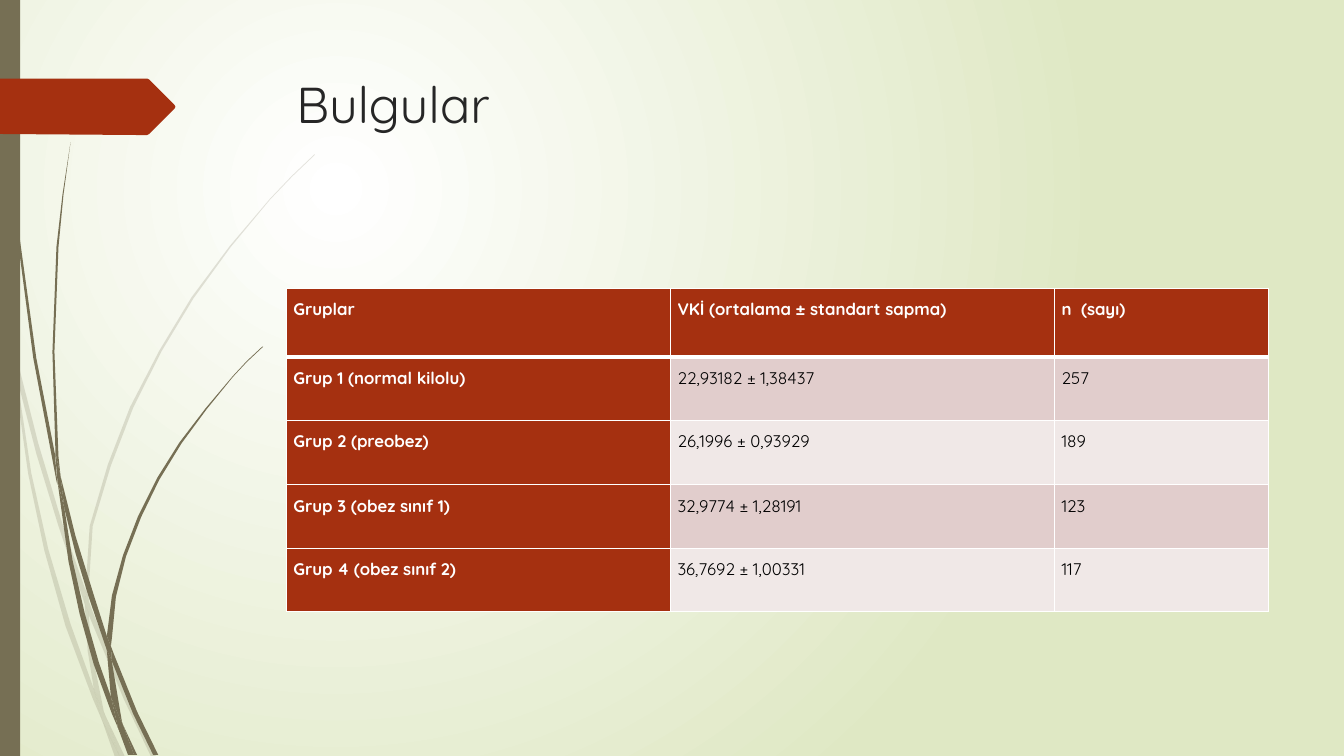
"""Builds the "Bulgular" findings slide with its grass motif and group table."""
from pptx import Presentation
from pptx.dml.color import RGBColor
from pptx.enum.shapes import MSO_SHAPE
from pptx.enum.text import MSO_ANCHOR
from pptx.oxml import parse_xml
from pptx.oxml.ns import nsdecls, qn
from pptx.util import Inches, Pt
from lxml.etree import SubElement

COLORS = {
    "stem": "766F54", "accent": "A53010", "title": "262626", "white": "FFFFFF",
    "black": "000000", "band_dark": "E1CDCC", "band_light": "F0E8E7", "edge": "DFE8C4",
}

HUNDREDTHS = 100

PALE_BLADES = [
    [(11, 350), (9, 322), (0, 282), (0, 299), (10, 344)],
    [(58, 522), (84, 599), (85, 586), (62, 520), (38, 440), (14, 345), (17, 376), (36, 450)],
    [(92, 607), (88, 596), (88, 610), (123, 694), (150, 751), (155, 751), (127, 692)],
    [(119, 751), (124, 751), (105, 711)],
    [(93, 683), (70, 619), (48, 545), (31, 469), (17, 376), (11, 350), (28, 470), (44, 546),
     (65, 621), (92, 693), (101, 714), (99, 707)],
    [(84, 599), (87, 646), (93, 683), (96, 692), (105, 711), (103, 706), (91, 646), (88, 610),
     (88, 608)],
    [(88, 584), (92, 522), (110, 462), (132, 405), (160, 349), (192, 296), (229, 245), (268, 198),
     (290, 175), (312, 154), (312, 153), (289, 175), (268, 197), (228, 244), (190, 295), (158, 348),
     (129, 404), (107, 461), (89, 522), (85, 584), (85, 586), (88, 596)],
    [(101, 714), (114, 751), (119, 751)],
    [(88, 608), (88, 610), (88, 596), (85, 586), (84, 599)],
    [(96, 692), (93, 683), (99, 707), (101, 714), (119, 751), (105, 711)],
]

DARK_BLADES = [
    [(7, 110), (17, 233), (33, 355), (56, 477), (57, 481), (55, 457), (55, 453), (36, 355),
     (19, 232), (8, 109), (5, 48), (4, 0), (3, 0), (4, 48)],
    [(88, 592), (106, 645), (106, 631), (93, 590), (75, 532), (60, 472), (64, 505), (75, 549)],
    [(113, 649), (110, 641), (111, 656), (132, 708), (152, 749), (157, 749), (136, 706)],
    [(110, 691), (98, 657), (84, 608), (72, 556), (64, 505), (57, 477), (68, 557), (79, 609),
     (93, 659), (111, 708), (117, 722), (116, 717)],
    [(60, 472), (58, 453), (54, 349), (58, 245), (63, 193), (70, 141), (62, 193), (56, 245),
     (52, 349), (55, 449)],
    [(133, 749), (136, 749), (122, 719)],
    [(57, 477), (64, 505), (60, 472), (55, 449), (55, 453)],
    [(111, 633), (115, 592), (125, 552), (140, 513), (158, 476), (180, 440), (205, 406), (231, 374),
     (245, 359), (261, 344), (260, 344), (245, 358), (231, 373), (204, 405), (178, 439), (156, 474),
     (137, 512), (122, 551), (111, 591), (106, 631), (110, 641)],
    [(117, 722), (127, 749), (131, 749)],
    [(106, 645), (110, 691), (116, 706), (122, 719), (121, 716), (111, 656), (109, 651)],
    [(106, 645), (109, 651), (111, 656), (110, 641), (106, 631)],
    [(116, 706), (110, 691), (116, 717), (117, 722), (130, 749), (133, 749), (122, 719)],
]

ARROW = [(173, 108), (148, 133), (146, 134), (136, 134), (0, 133), (0, 78), (146, 78), (148, 79),
         (173, 104), (174, 106)]

GROUPS = [
    ("Gruplar", "VKİ (ortalama ± standart sapma)", "n  (sayı)"),
    ("Grup 1 (normal kilolu)", "22,93182 ± 1,38437", "257"),
    ("Grup 2 (preobez)", "26,1996 ± 0,93929", "189"),
    ("Grup 3 (obez sınıf 1)", "32,9774 ± 1,28191", "123"),
    ("Grup 4 (obez sınıf 2)", "36,7692 ± 1,00331", "117"),
]
COLUMN_WIDTHS = (3.81, 3.81, 2.12)
ROW_HEIGHTS = (0.68, 0.63, 0.64, 0.63, 0.63)

CELL_FORMAT = {
    "margin_left": Inches(0.07), "margin_right": Inches(0.07),
    "margin_top": 0, "margin_bottom": 0, "vertical_anchor": MSO_ANCHOR.TOP,
}
CELL_PARAGRAPH = {"line_spacing": 1.5, "space_before": Pt(12)}
TITLE_FRAME = {"word_wrap": True, "vertical_anchor": MSO_ANCHOR.TOP}


def apply(target, values):
    for name, value in values.items():
        setattr(target, name, value)


class SlidePainter:
    def __init__(self, slide, font="Quicksand"):
        self.slide = slide
        self.font = font

    def paint(self, fill, color):
        fill.solid()
        fill.fore_color.rgb = RGBColor.from_string(COLORS[color])

    def background(self, center, edge):
        self.slide.element.cSld.insert(0, parse_xml(
            f'<p:bg {nsdecls("p", "a")}><p:bgPr><a:gradFill rotWithShape="1"><a:gsLst>'
            f'<a:gs pos="0"><a:srgbClr val="{COLORS[center]}"/></a:gs>'
            f'<a:gs pos="100000"><a:srgbClr val="{COLORS[edge]}"/></a:gs></a:gsLst>'
            '<a:path path="circle"><a:fillToRect l="50000" t="50000" r="100000" b="100000"/>'
            '</a:path></a:gradFill><a:effectLst/></p:bgPr></p:bg>'))

    def finish(self, shape, color):
        self.paint(shape.fill, color)
        shape.line.fill.background()
        shape.shadow.inherit = False

    def outline(self, points, color, alpha=None):
        builder = self.slide.shapes.build_freeform(*points[0], scale=Inches(1) / HUNDREDTHS)
        builder.add_line_segments(points[1:], close=True)
        shape = builder.convert_to_shape()
        self.finish(shape, color)
        if alpha:
            tint = shape.element.spPr.find(qn("a:solidFill")).find(qn("a:srgbClr"))
            SubElement(tint, qn("a:alpha"), val=str(alpha * 1000))

    def bar(self, box, color):
        self.finish(self.slide.shapes.add_shape(MSO_SHAPE.RECTANGLE, *map(Inches, box)), color)

    def wording(self, paragraph, text, size, color, bold=False):
        run = paragraph.add_run()
        run.text = text
        apply(run.font, {"name": self.font, "size": Pt(size), "bold": bold})
        run.font.color.rgb = RGBColor.from_string(COLORS[color])

    def title(self, text, box):
        frame = self.slide.shapes.add_textbox(*map(Inches, box)).text_frame
        apply(frame, TITLE_FRAME)
        self.wording(frame.paragraphs[0], text, 36, "title")

    def borders(self, cell, widths):
        properties = cell._tc.get_or_add_tcPr()
        for position, (side, width) in enumerate(widths.items()):
            properties.insert(position, parse_xml(
                f'<a:ln{side} {nsdecls("a")} w="{Pt(width)}"><a:solidFill>'
                f'<a:srgbClr val="{COLORS["white"]}"/></a:solidFill></a:ln{side}>'))

    def table(self, rows, box, widths, heights):
        table = self.slide.shapes.add_table(len(rows), len(widths), *map(Inches, box)).table
        for column, width in zip(table.columns, widths):
            column.width = Inches(width)
        for row, height in zip(table.rows, heights):
            row.height = Inches(height)
        for r, texts in enumerate(rows):
            for c, text in enumerate(texts):
                cell = table.cell(r, c)
                heading = r == 0 or c == 0
                band = "band_dark" if r % 2 else "band_light"
                apply(cell, CELL_FORMAT)
                self.paint(cell.fill, "accent" if heading else band)
                self.borders(cell, {"L": 1, "R": 1, "T": 3 if r == 1 else 1, "B": 1 if r else 3})
                paragraph = cell.text_frame.paragraphs[0]
                apply(paragraph, CELL_PARAGRAPH)
                self.wording(paragraph, text, 12, "white" if heading else "black", heading)


def main():
    deck = Presentation()
    apply(deck, {"slide_width": Inches(13.33), "slide_height": Inches(7.5)})
    painter = SlidePainter(deck.slides.add_slide(deck.slide_layouts[6]))
    painter.background("white", "edge")
    for blades, alpha in ((PALE_BLADES, 20), (DARK_BLADES, None)):
        for blade in blades:
            painter.outline(blade, "stem", alpha)
    painter.bar((0, 0, 0.2, 7.5), "stem")
    painter.outline(ARROW, "accent")
    painter.title("Bulgular", (2.84, 0.68, 9.75, 1.4))
    painter.table(GROUPS, (2.84, 2.86, 9.75, 3.2), COLUMN_WIDTHS, ROW_HEIGHTS)
    deck.save("out.pptx")


if __name__ == "__main__":
    main()
